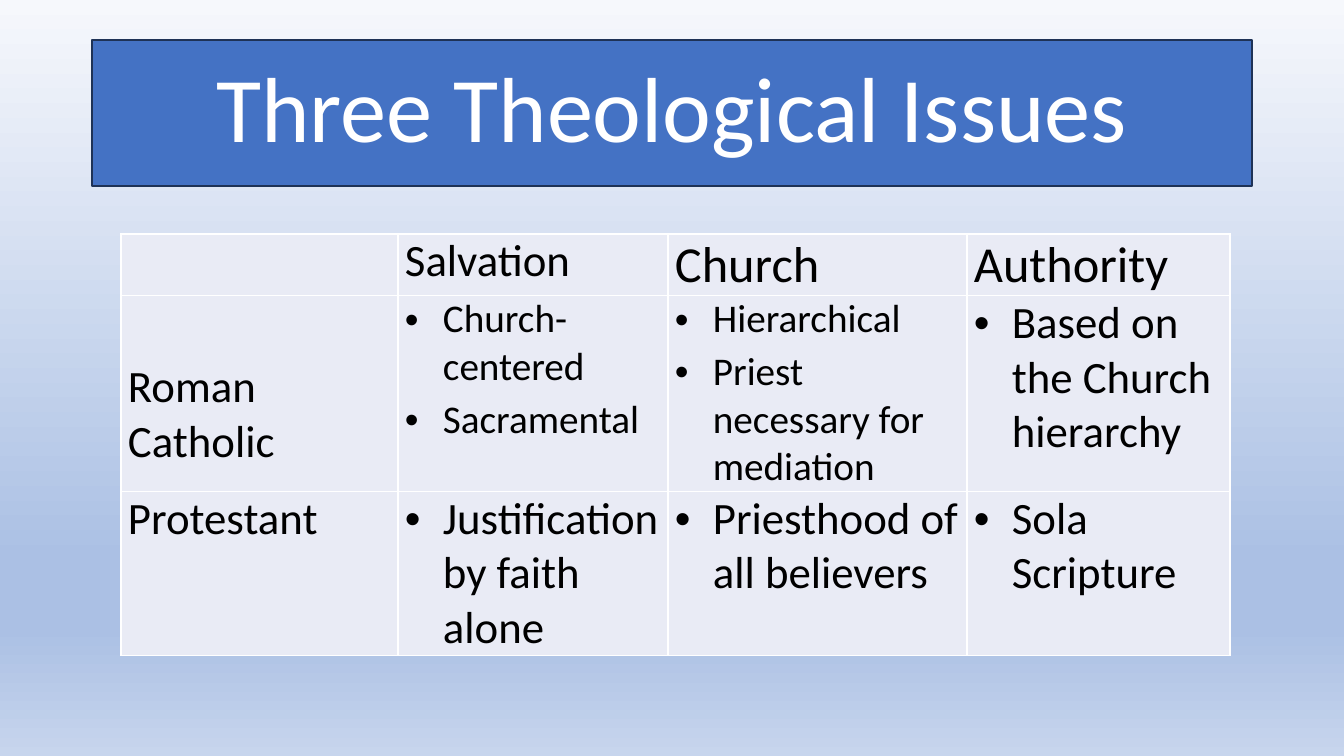
from copy import deepcopy

from lxml.etree import SubElement
from pptx import Presentation
from pptx.dml.color import RGBColor
from pptx.enum.text import MSO_ANCHOR as Anchor, MSO_AUTO_SIZE as AutoSize, PP_ALIGN as Align
from pptx.oxml.ns import qn
from pptx.util import Pt

EMU_PER_PX = 12192000 / 1344
FONT = "Calibri"
BLACK, WHITE = "000000", "FFFFFF"
CELL_FILL = "E9EBF5"
BACKGROUND_STOPS = [(0, "F6F8FC"), (0.74, "ABC0E4"), (0.83, "ABC0E4"), (1, "C7D5ED")]

COLUMN_WIDTHS = [277, 270, 299, 263]
ROW_HEIGHTS = [53, 186, 156]
CELL_INSET = 7
BULLET_INDENT = 38
ROMAN_CATHOLIC_DROP = 64

# Each cell: lines of text, size in points, bulleted or not
ISSUES = [
    [([], 32, False), (["Salvation"], 32, False),
     (["Church"], 36, False), (["Authority"], 36, False)],
    [(["Roman Catholic"], 32, False),
     (["Church-centered", "Sacramental"], 28, True),
     (["Hierarchical", "Priest necessary for mediation"], 28, True),
     (["Based on the Church hierarchy"], 32, True)],
    [(["Protestant"], 32, False),
     (["Justification by faith alone"], 32, True),
     (["Priesthood of all believers"], 32, True),
     (["Sola Scripture"], 32, True)],
]


def px(length):
    return round(length * EMU_PER_PX)


def color(value):
    return RGBColor.from_string(value)


def set_all(target, values):
    for name, value in values.items():
        setattr(target, name, value)


def write(para, text, size, text_color):
    span = para.add_run()
    span.text = text
    set_all(span.font, {"name": FONT, "size": Pt(size), "bold": False})
    span.font.color.rgb = color(text_color)


def paint_background(page):
    fill = page.background.fill
    fill.gradient()
    fill.gradient_angle = 270
    stop_list = page._element.find(".//" + qn("a:gsLst"))
    while len(stop_list) < len(BACKGROUND_STOPS):
        stop_list.append(deepcopy(stop_list[0]))
    for stop, (position, value) in zip(fill.gradient_stops, BACKGROUND_STOPS):
        stop.position = position
        stop.color.rgb = color(value)


def add_title(page, text):
    title = page.shapes.title
    set_all(title, {"left": px(92), "top": px(40), "width": px(1160), "height": px(146)})
    title.fill.solid()
    title.fill.fore_color.rgb = color("4472C4")
    title.line.color.rgb = color("1E3256")
    title.line.width = Pt(1)
    set_all(title.text_frame, {"vertical_anchor": Anchor.MIDDLE, "word_wrap": True,
                               "auto_size": AutoSize.NONE})
    para = title.text_frame.paragraphs[0]
    set_all(para, {"alignment": Align.CENTER, "line_spacing": 0.9})
    write(para, text, 66, WHITE)


def add_bullet(para):
    properties = para._p.get_or_add_pPr()
    properties.set("marL", str(px(BULLET_INDENT)))
    properties.set("indent", str(-px(BULLET_INDENT)))
    SubElement(properties, qn("a:buFont"), typeface="Arial")
    SubElement(properties, qn("a:buChar"), char="•")


def add_borders(cell):
    properties = cell._tc.get_or_add_tcPr()
    for side in ("lnL", "lnR", "lnT", "lnB"):
        line = SubElement(properties, qn(f"a:{side}"), w=str(Pt(1)))
        SubElement(SubElement(line, qn("a:solidFill")), qn("a:srgbClr"), val=WHITE)


def fill_cell(cell, lines, size, bulleted):
    add_borders(cell)
    cell.fill.solid()
    cell.fill.fore_color.rgb = color(CELL_FILL)
    set_all(cell, {"margin_left": px(CELL_INSET), "margin_right": px(CELL_INSET),
                   "margin_top": 0, "margin_bottom": 0})
    frame = cell.text_frame
    for index, text in enumerate(lines):
        para = frame.add_paragraph() if index else frame.paragraphs[0]
        set_all(para, {"space_before": Pt(0 if index else 6), "space_after": Pt(3)})
        if bulleted:
            add_bullet(para)
        write(para, text, size, BLACK)


def add_issue_table(page):
    frame = page.shapes.add_table(len(ROW_HEIGHTS), len(COLUMN_WIDTHS), px(121), px(234),
                                  px(sum(COLUMN_WIDTHS)), px(sum(ROW_HEIGHTS)))
    table = frame.table
    set_all(table, {"first_row": False, "horz_banding": False})
    for column, width in zip(table.columns, COLUMN_WIDTHS):
        column.width = px(width)
    for row, height, contents in zip(table.rows, ROW_HEIGHTS, ISSUES):
        row.height = px(height)
        for cell, content in zip(row.cells, contents):
            fill_cell(cell, *content)
    table.cell(1, 0).margin_top = px(ROMAN_CATHOLIC_DROP)


def main():
    deck = Presentation()
    set_all(deck, {"slide_width": px(1344), "slide_height": px(756)})
    page = deck.slides.add_slide(deck.slide_layouts.get_by_name("Title Only"))
    paint_background(page)
    add_title(page, "Three Theological Issues")
    add_issue_table(page)
    deck.save("out.pptx")


if __name__ == "__main__":
    main()
